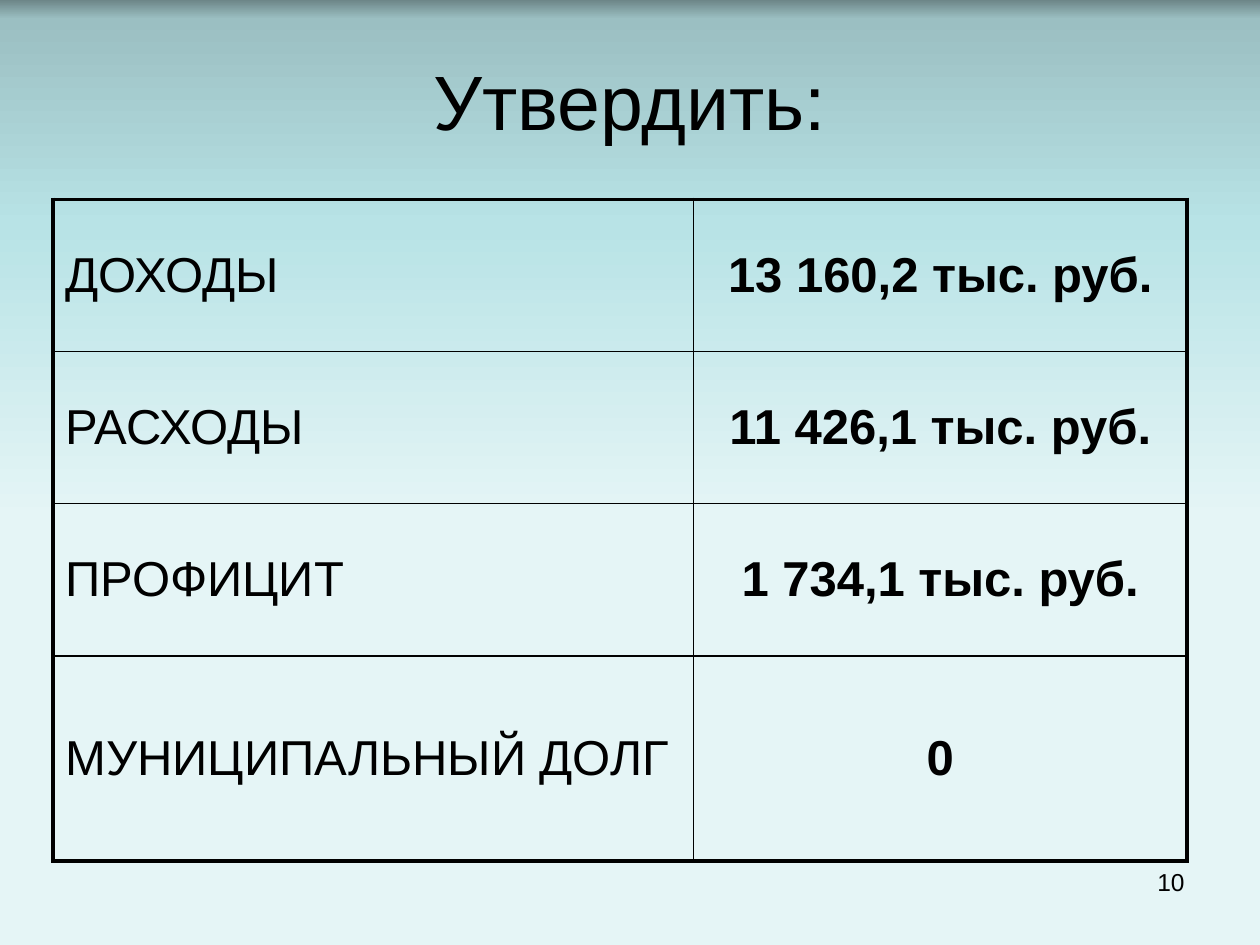
from copy import deepcopy

from lxml.etree import SubElement
from pptx import Presentation
from pptx.dml.color import RGBColor
from pptx.enum.text import MSO_ANCHOR, PP_ALIGN
from pptx.oxml.ns import qn
from pptx.util import Inches, Pt

W, H = 10, 7.5
FONT = "Arial"
COLORS = {"text": "000000", "border": "000000", "top": "6D8688",
          "haze": "9BBFC2", "aqua": "B8E3E6", "pale": "E5F5F6"}
GRADIENT = [(0, "top"), (2, "haze"), (24, "aqua"), (55, "pale")]
OUTER, INNER = 2.25, 1
ROWS = [("ДОХОДЫ", "13 160,2 тыс. руб."),
        ("РАСХОДЫ", "11 426,1 тыс. руб."),
        ("ПРОФИЦИТ", "1 734,1 тыс. руб."),
        ("МУНИЦИПАЛЬНЫЙ ДОЛГ", "0")]
COL_SHARES = [0.565, 0.435]
ROW_SHARES = [0.23, 0.23, 0.23, 0.31]


def box(x, y, w, h):
    """Turn shares of the slide into lengths."""
    return Inches(x * W), Inches(y * H), Inches(w * W), Inches(h * H)


def write(tf, text, size, align, bold=False):
    tf.text = text
    p = tf.paragraphs[0]
    p.alignment = align
    font = p.runs[0].font
    font.name, font.size, font.bold = FONT, Pt(size), bold
    font.color.rgb = RGBColor.from_string(COLORS["text"])


def add_background(s):
    fill = s.background.fill
    fill.gradient()
    fill.gradient_angle = 270
    stops = s.element.find(".//" + qn("a:gsLst"))
    for _ in range(len(GRADIENT) - len(stops)):
        stops.append(deepcopy(stops[0]))
    for stop, (share, name) in zip(fill.gradient_stops, GRADIENT):
        stop.position = share / 100
        stop.color.rgb = RGBColor.from_string(COLORS[name])


def add_text(s, area, text, size, align, anchor):
    tf = s.shapes.add_textbox(*area).text_frame
    tf.word_wrap = True
    tf.vertical_anchor = anchor
    write(tf, text, size, align)


def set_borders(cell, widths):
    tcPr = cell._tc.get_or_add_tcPr()
    for i, (side, width) in enumerate(widths.items()):
        ln = tcPr.makeelement(qn("a:ln" + side), {"w": str(Pt(width))})
        solid = SubElement(ln, qn("a:solidFill"))
        SubElement(solid, qn("a:srgbClr"), val=COLORS["border"])
        tcPr.insert(i, ln)  # borders come before the fill


def add_budget_table(s, area):
    n_rows, n_cols = len(ROWS), len(COL_SHARES)
    table = s.shapes.add_table(n_rows, n_cols, *area).table
    table.first_row = table.horz_banding = False
    for col, share in zip(table.columns, COL_SHARES):
        col.width = int(area[2] * share)
    for row, share in zip(table.rows, ROW_SHARES):
        row.height = int(area[3] * share)
    for r, texts in enumerate(ROWS):
        for c, text in enumerate(texts):
            cell = table.cell(r, c)
            cell.fill.background()
            cell.vertical_anchor = MSO_ANCHOR.MIDDLE
            # Amounts are bold and centred, labels plain
            align = PP_ALIGN.CENTER if c else PP_ALIGN.LEFT
            write(cell.text_frame, text, 28, align, bold=c > 0)
            # Heavy frame around a thin grid
            set_borders(cell, {
                "L": OUTER if c == 0 else INNER,
                "R": OUTER if c == n_cols - 1 else INNER,
                "T": OUTER if r == 0 else INNER,
                "B": OUTER if r == n_rows - 1 else INNER})


def add_title(s, area, text):
    s.shapes.title.left, s.shapes.title.top = area[:2]
    s.shapes.title.width, s.shapes.title.height = area[2:]
    write(s.shapes.title.text_frame, text, 44, PP_ALIGN.CENTER)


def main():
    prs = Presentation()
    prs.slide_width, prs.slide_height = Inches(W), Inches(H)
    s = prs.slides.add_slide(prs.slide_layouts[6])
    add_background(s)
    # Page number, title, table
    add_text(s, box(0.717, 0.911, 0.233, 0.069), "10", 14,
             PP_ALIGN.RIGHT, MSO_ANCHOR.TOP)
    add_text(s, box(0.05, 0.044, 0.9, 0.123), "Утвердить:", 44,
             PP_ALIGN.CENTER, MSO_ANCHOR.MIDDLE)
    add_budget_table(s, box(0.042, 0.211, 0.9, 0.7))
    prs.save("out.pptx")


if __name__ == "__main__":
    main()
